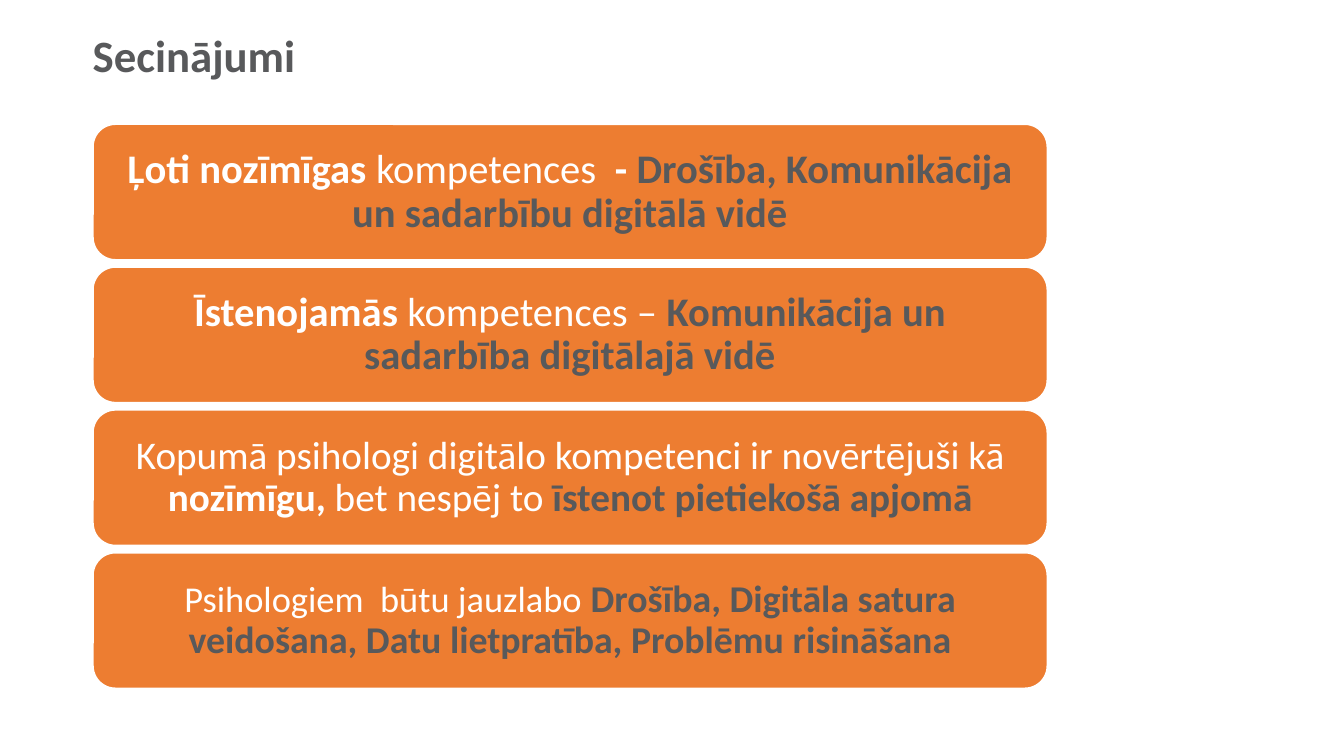
from pptx import Presentation
from pptx.dml.color import RGBColor
from pptx.enum.shapes import MSO_SHAPE
from pptx.enum.text import MSO_ANCHOR, PP_ALIGN
from pptx.util import Inches, Pt

WHITE = RGBColor(0xFF, 0xFF, 0xFF)
GREY = RGBColor(0x58, 0x59, 0x5B)
ORANGE = RGBColor(0xED, 0x7D, 0x31)
FONT = "Calibri"

# Each span: text, size, colour, bold
TITLE = [("Secinājumi", 32, GREY, True)]
CONCLUSIONS = [
    [("Ļoti nozīmīgas ", 29, WHITE, True),
     ("kompetences  ", 29, WHITE, False),
     ("- ", 29, WHITE, True),
     ("Drošība, Komunikācija un sadarbību digitālā vidē", 29, GREY, True)],
    [("Īstenojamās ", 29, WHITE, True),
     ("kompetences – ", 29, WHITE, False),
     ("Komunikācija un sadarbība digitālajā vidē", 29, GREY, True)],
    [("Kopumā psihologi digitālo kompetenci ir novērtējuši kā ", 28, WHITE, False),
     ("nozīmīgu,", 28, WHITE, True),
     (" bet nespēj to ", 28, WHITE, False),
     ("īstenot pietiekošā apjomā", 28, GREY, True)],
    [("Psihologiem  būtu jauzlabo ", 26, WHITE, False),
     ("Drošība, Digitāla satura veidošana, Datu lietpratība, Problēmu risināšana",
      27, GREY, True)],
]

LEFT = 0.92
TITLE_TOP, TITLE_WIDTH, TITLE_HEIGHT = 0.34, 11.5, 0.57
CARD_TOP, CARD_WIDTH, CARD_HEIGHT = 1.23, 9.47, 1.35
CARD_PITCH = 1.417


def write(box, spans, alignment, anchor, inset_x=0, inset_y=0):
    frame = box.text_frame
    frame.word_wrap = True
    frame.vertical_anchor = anchor
    frame.margin_left = frame.margin_right = Inches(inset_x)
    frame.margin_top = frame.margin_bottom = Inches(inset_y)
    para = frame.paragraphs[0]
    para.alignment = alignment
    para.line_spacing = 0.9
    for text, size, colour, bold in spans:
        span = para.add_run()
        span.text = text
        span.font.name = FONT
        span.font.size = Pt(size)
        span.font.bold = bold
        span.font.color.rgb = colour


def add_card(page, row, spans):
    card = page.shapes.add_shape(
        MSO_SHAPE.ROUNDED_RECTANGLE, Inches(LEFT), Inches(CARD_TOP + row * CARD_PITCH),
        Inches(CARD_WIDTH), Inches(CARD_HEIGHT))
    card.shadow.inherit = False
    card.fill.solid()
    card.fill.fore_color.rgb = ORANGE
    card.line.color.rgb = WHITE
    card.line.width = Pt(1.5)
    write(card, spans, PP_ALIGN.CENTER, MSO_ANCHOR.MIDDLE, 0.12, 0.06)


def main():
    deck = Presentation()
    deck.slide_width, deck.slide_height = Inches(13.33), Inches(7.5)
    page = deck.slides.add_slide(deck.slide_layouts[6])
    title = page.shapes.add_textbox(
        Inches(LEFT), Inches(TITLE_TOP), Inches(TITLE_WIDTH), Inches(TITLE_HEIGHT))
    write(title, TITLE, PP_ALIGN.LEFT, MSO_ANCHOR.TOP)
    for row, spans in enumerate(CONCLUSIONS):
        add_card(page, row, spans)
    deck.save("out.pptx")


if __name__ == "__main__":
    main()
